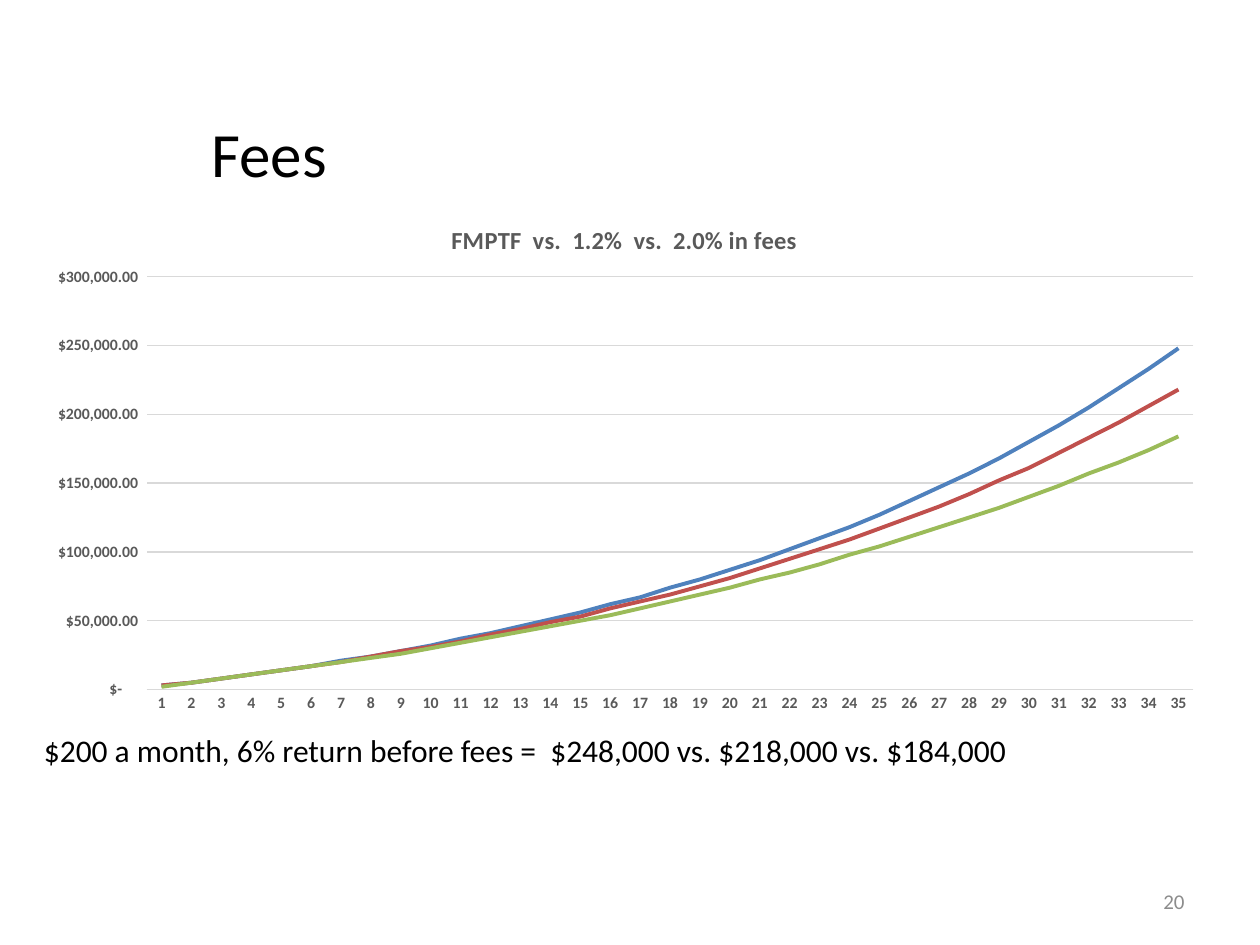
import pptx
import pptx.util
import pptx.chart.data
import pptx.dml.color
import pptx.enum.chart
import pptx.enum.text
import pptx.oxml
import pptx.oxml.ns

Inches, Pt = pptx.util.Inches, pptx.util.Pt
RGBColor = pptx.dml.color.RGBColor
PP_ALIGN = pptx.enum.text.PP_ALIGN
MSO_ANCHOR = pptx.enum.text.MSO_ANCHOR

# Colours and font
BLACK = RGBColor(0x00, 0x00, 0x00)
GRAY = RGBColor(0x59, 0x59, 0x59)
PAGE_GRAY = RGBColor(0x8C, 0x8C, 0x8C)
GRID_GRAY = RGBColor(0xD9, 0xD9, 0xD9)
BLUE = RGBColor(0x4F, 0x81, 0xBD)
RED = RGBColor(0xC0, 0x50, 0x4D)
GREEN = RGBColor(0x9B, 0xBB, 0x59)
FONT = "Calibri"

# Content
HEADING = "Fees"
SUMMARY = "$200 a month, 6% return before fees =  $248,000 vs. $218,000 vs. $184,000"
PAGE = "20"
CHART_TITLE = "FMPTF  vs.  1.2%  vs.  2.0% in fees"
DOLLARS = r'_("$"* #,##0.00_);_("$"* \(#,##0.00\);_("$"* "-"??_);_(@_)'
YEARS = [str(year) for year in range(1, 36)]
# Balance after each year, in thousands of dollars
BALANCES = [
    ("Series 1", BLUE, [
        3, 5, 8, 11, 14, 17, 21, 24, 28, 32, 37, 41, 46, 51, 56, 62, 67, 74,
        80, 87, 94, 102, 110, 118, 127, 137, 147, 157, 168, 180, 192, 205,
        219, 233, 248]),
    ("Series 2", RED, [
        3, 5, 8, 11, 14, 17, 20, 24, 28, 31, 35, 40, 44, 49, 53, 59, 64, 69,
        75, 81, 88, 95, 102, 109, 117, 125, 133, 142, 152, 161, 172, 183,
        194, 206, 218]),
    ("Series 3", GREEN, [
        2, 5, 8, 11, 14, 17, 20, 23, 26, 30, 34, 38, 42, 46, 50, 54, 59, 64,
        69, 74, 80, 85, 91, 98, 104, 111, 118, 125, 132, 140, 148, 157, 165,
        174, 184]),
]


def style_font(font, size, color, bold=False):
    font.name, font.size, font.bold = FONT, Pt(size), bold
    font.color.rgb = color


def write(shape, text, size, color=BLACK, align=PP_ALIGN.LEFT, anchor=MSO_ANCHOR.TOP):
    frame = shape.text_frame
    frame.word_wrap = True
    frame.auto_size = pptx.enum.text.MSO_AUTO_SIZE.NONE
    frame.vertical_anchor = anchor
    paragraph = frame.paragraphs[0]
    paragraph.alignment = align
    run = paragraph.add_run()
    run.text = text
    style_font(run.font, size, color)


def place_in_chart(parent, **fractions):
    """Give a chart part a manual layout, in fractions of the chart."""
    layout = parent.get_or_add_layout() if hasattr(parent, "get_or_add_layout") else None
    if layout is None:
        layout = parent.find(pptx.oxml.ns.qn("c:layout"))
    if layout is None:
        layout = pptx.oxml.parse_xml(f"<c:layout {pptx.oxml.ns.nsdecls('c')}/>")
        parent.insert(0, layout)
    for child in list(layout):
        layout.remove(child)
    settings = {"xMode": "edge", "yMode": "edge", **fractions}
    if "w" in fractions:
        settings = {"layoutTarget": "inner", **settings}
    tags = "".join(f'<c:{tag} val="{value}"/>' for tag, value in settings.items())
    layout.append(pptx.oxml.parse_xml(
        f"<c:manualLayout {pptx.oxml.ns.nsdecls('c')}>{tags}</c:manualLayout>"))


def style_axis(axis):
    axis.major_tick_mark = axis.minor_tick_mark = pptx.enum.chart.XL_TICK_MARK.NONE
    style_font(axis.tick_labels.font, 9, GRAY, bold=True)


def set_line(line, color, width):
    line.color.rgb = color
    line.width = Pt(width)


def add_balance_chart(slide):
    data = pptx.chart.data.CategoryChartData(number_format=DOLLARS)
    data.categories = YEARS
    for name, _, thousands in BALANCES:
        data.add_series(name, [value * 1000 for value in thousands])
    chart = slide.shapes.add_chart(
        pptx.enum.chart.XL_CHART_TYPE.LINE,
        Inches(0.25), Inches(1.57), Inches(9.42), Inches(4.18), data).chart
    style_font(chart.font, 10, BLACK)
    chart.has_legend = False

    # Title
    chart.has_title = True
    title = chart.chart_title
    title.include_in_layout = False
    title.text_frame.text = CHART_TITLE
    style_font(title.text_frame.paragraphs[0].runs[0].font, 14, GRAY, bold=True)
    place_in_chart(title._element, x=0.35, y=0.04)

    # Axes
    years, dollars = chart.category_axis, chart.value_axis
    style_axis(years)
    set_line(years.format.line, GRID_GRAY, 0.75)
    style_axis(dollars)
    dollars.format.line.fill.background()
    dollars.minimum_scale, dollars.maximum_scale, dollars.major_unit = 0, 300000, 50000
    dollars.has_major_gridlines = True
    set_line(dollars.major_gridlines.format.line, GRID_GRAY, 0.75)
    dollars.tick_labels.number_format = DOLLARS
    dollars.tick_labels.number_format_is_linked = False

    # Lines
    plot = chart.plots[0]
    plot.vary_by_categories = False
    for series, (_, color, _) in zip(plot.series, BALANCES):
        series.smooth = False
        series.marker.style = pptx.enum.chart.XL_MARKER_STYLE.NONE
        set_line(series.format.line, color, 2.25)
    plot_area = chart._chartSpace.chart.plotArea
    place_in_chart(plot_area, x=0.097, y=0.15, w=0.882, h=0.784)


def main():
    prs = pptx.Presentation()
    prs.slide_width, prs.slide_height = Inches(10), Inches(7.5)
    slide = prs.slides.add_slide(prs.slide_layouts[5])

    add_balance_chart(slide)

    # Summary below the chart
    summary = slide.shapes.add_textbox(Inches(0.25), Inches(5.75), Inches(9.61), Inches(0.4))
    write(summary, SUMMARY, 18)

    # Heading
    heading = slide.shapes.title
    heading.left, heading.top = Inches(1.58), Inches(0.67)
    heading.width, heading.height = Inches(8.42), Inches(1.08)
    write(heading, HEADING, 36, anchor=MSO_ANCHOR.MIDDLE)

    # Page number
    page = slide.shapes.add_textbox(Inches(7.17), Inches(6.95), Inches(2.33), Inches(0.4))
    write(page, PAGE, 12, PAGE_GRAY, PP_ALIGN.RIGHT, MSO_ANCHOR.MIDDLE)

    prs.save("out.pptx")


if __name__ == "__main__":
    main()
